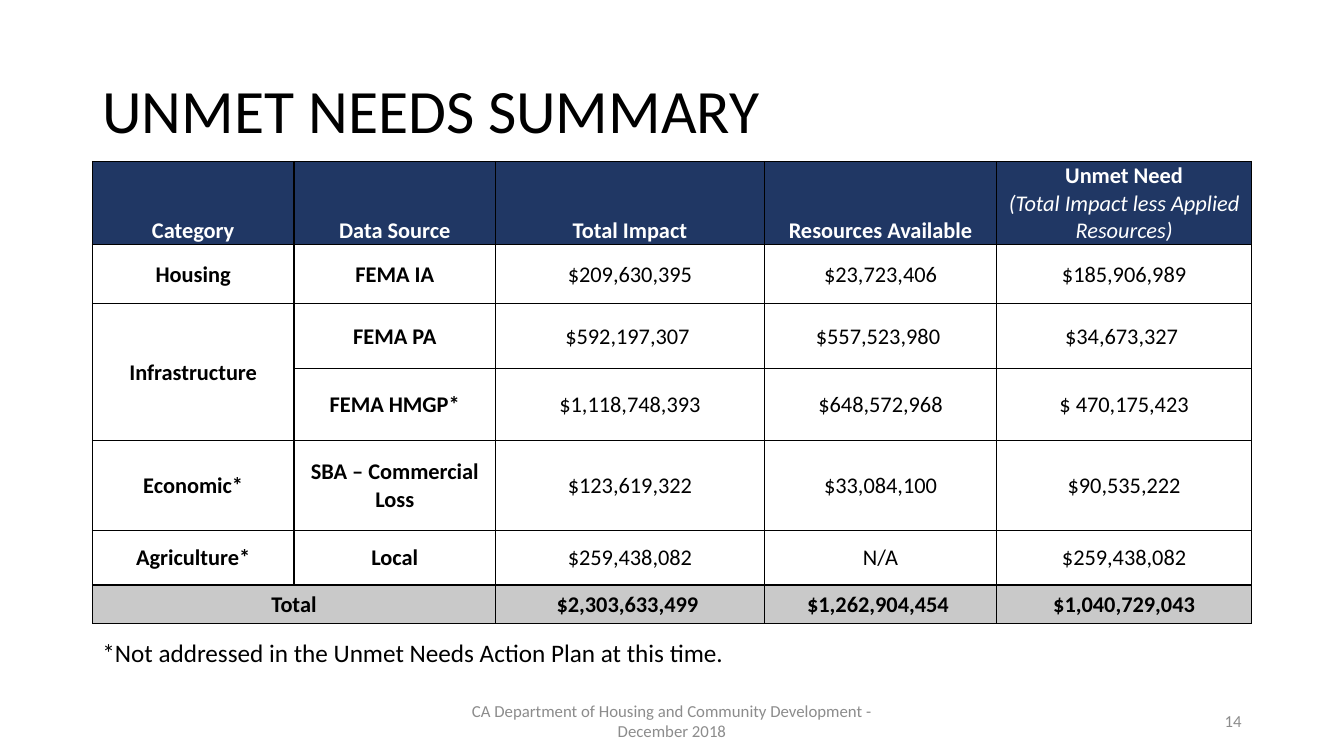
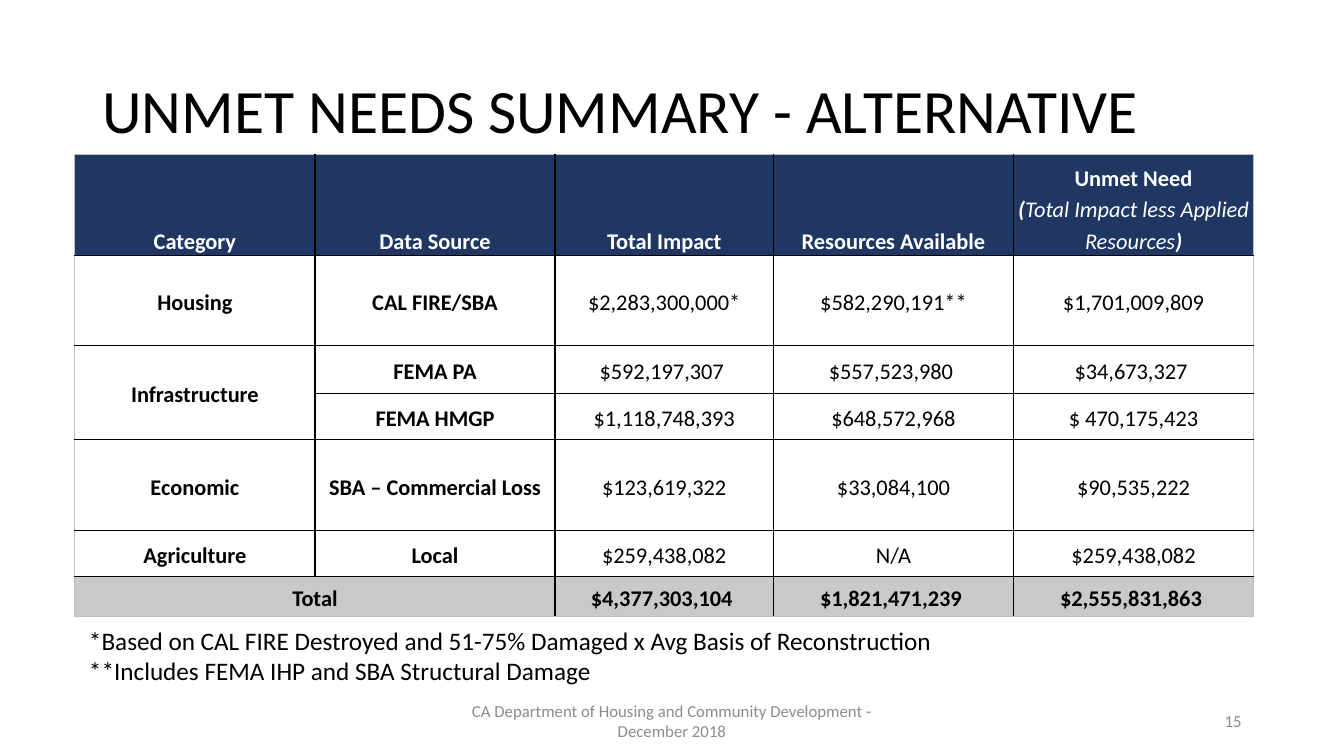
import pptx
import pptx.dml.color
import pptx.enum.text
import pptx.oxml
import pptx.oxml.ns
import pptx.util

Pt = pptx.util.Pt
ALIGN = pptx.enum.text.PP_ALIGN
ANCHOR = pptx.enum.text.MSO_ANCHOR

FONT = "Calibri"
BLACK, WHITE, NAVY, SILVER = "000000", "FFFFFF", "203764", "C9C9C9"
EDGE_GREY, FOOTER_GREY = "BFBFBF", "8C8C8C"
FOOTER = "CA Department of Housing and Community Development - December 2018"


def rgb(hex_colour):
    return pptx.dml.color.RGBColor.from_string(hex_colour)


def write(frame, paragraphs, size=16, colour=BLACK, align=ALIGN.LEFT,
          anchor=ANCHOR.TOP, spacing=None, bold=False):
    frame.word_wrap = True
    frame.vertical_anchor = anchor
    for index, pieces in enumerate(paragraphs):
        paragraph = frame.paragraphs[0] if index == 0 else frame.add_paragraph()
        paragraph.alignment = align
        if spacing:
            paragraph.line_spacing = spacing
        if isinstance(pieces, str):
            pieces = [(pieces, bold, False)]
        for words, is_bold, is_italic in pieces:
            run = paragraph.add_run()
            run.text = words
            run.font.name = FONT
            run.font.size = Pt(size)
            run.font.bold = is_bold
            run.font.italic = is_italic
            run.font.color.rgb = rgb(colour)


def add_text(slide, left, top, width, height, paragraphs, **style):
    box = slide.shapes.add_textbox(Pt(left), Pt(top), Pt(width), Pt(height))
    write(box.text_frame, paragraphs, **style)


def set_border(cell, side, colour):
    cell._tc.get_or_add_tcPr().append(pptx.oxml.parse_xml(
        f'<a:ln{side} {pptx.oxml.ns.nsdecls("a")} w="{Pt(1)}">'
        f'<a:solidFill><a:srgbClr val="{colour}"/></a:solidFill></a:ln{side}>'))


def format_cell(cell, content, row, column, last_row, last_column, edge, spacing):
    cell.margin_left = cell.margin_right = cell.margin_top = Pt(0.7)
    cell.margin_bottom = 0
    outer = {"L": column == 0, "R": column == last_column,
             "T": row == 0, "B": row == last_row}
    for side, is_outer in outer.items():
        set_border(cell, side, edge if is_outer else BLACK)
    header, total = row == 0, row == last_row
    if header or total:
        cell.fill.solid()
        cell.fill.fore_color.rgb = rgb(NAVY if header else SILVER)
    else:
        cell.fill.background()
    cell.vertical_anchor = ANCHOR.BOTTOM if header else ANCHOR.MIDDLE
    if content is not None:
        write(cell.text_frame, content if isinstance(content, list) else [content],
              colour=WHITE if header else BLACK, align=ALIGN.CENTER,
              anchor=cell.vertical_anchor, spacing=spacing,
              bold=header or total or column < 2)


def add_needs_table(slide, left, top, widths, heights, rows, edge=BLACK, spacing=None):
    table = slide.shapes.add_table(len(heights), len(widths), Pt(left), Pt(top),
                                   Pt(sum(widths)), Pt(sum(heights))).table
    table.first_row = table.horz_banding = False
    for column, width in zip(table.columns, widths):
        column.width = Pt(width)
    for row, height in zip(table.rows, heights):
        row.height = Pt(height)
    table.cell(2, 0).merge(table.cell(3, 0))
    last_row, last_column = len(heights) - 1, len(widths) - 1
    table.cell(last_row, 0).merge(table.cell(last_row, 1))
    for r, contents in enumerate(rows):
        for c, content in enumerate(contents):
            format_cell(table.cell(r, c), content, r, c, last_row, last_column,
                        edge, spacing)


def needs_rows(formula, housing, totals, mark=""):
    return [
        ["Category", "Data Source", "Total Impact", "Resources Available",
         ["Unmet Need", formula]],
        ["Housing", *housing],
        ["Infrastructure", "FEMA PA", "$592,197,307 ", "$557,523,980 ", "$34,673,327 "],
        [None, "FEMA HMGP" + mark, "$1,118,748,393", "$648,572,968", "$ 470,175,423"],
        ["Economic" + mark, "SBA – Commercial Loss", "$123,619,322", "$33,084,100",
         "$90,535,222"],
        ["Agriculture" + mark, "Local", "$259,438,082", "N/A", "$259,438,082"],
        ["Total", None, *totals],
    ]


def add_needs_slide(deck, title, number):
    slide = deck.slides.add_slide(deck.slide_layouts.get_by_name("Title Only"))
    heading = slide.shapes.title
    heading.left, heading.top = Pt(66), Pt(29)
    heading.width, heading.height = Pt(842), Pt(104)
    write(heading.text_frame, [title], size=44, anchor=ANCHOR.MIDDLE, spacing=0.9)
    footer_style = dict(size=12, colour=FOOTER_GREY, anchor=ANCHOR.MIDDLE)
    add_text(slide, 318, 500.5, 324, 28.8, [FOOTER], align=ALIGN.CENTER, **footer_style)
    add_text(slide, 678, 500.5, 216, 28.8, [str(number)], align=ALIGN.RIGHT,
             **footer_style)
    return slide


def main():
    deck = pptx.Presentation()
    deck.slide_width, deck.slide_height = Pt(960), Pt(540)

    summary = add_needs_slide(deck, "UNMET NEEDS SUMMARY", 14)
    add_needs_table(
        summary, 66, 115.4, [144, 144, 192, 166, 182],
        [59, 42.5, 46.5, 51, 64.5, 39, 27.5],
        needs_rows([("(Total Impact less Applied Resources)", False, True)],
                   ["FEMA IA", "$209,630,395", "$23,723,406", "$185,906,989"],
                   ["$2,303,633,499 ", "$1,262,904,454 ", "$1,040,729,043"], mark="*"))
    add_text(summary, 66, 451.5, 461, 29,
             ["*Not addressed in the Unmet Needs Action Plan at this time."], size=18)

    alternative = add_needs_slide(deck, "UNMET NEEDS SUMMARY - ALTERNATIVE", 15)
    add_needs_table(
        alternative, 53.5, 110.2, [171.5, 171.5, 156, 171.5, 171.5],
        [72, 64.5, 34.5, 32.5, 65.5, 32.5, 29],
        needs_rows([("(", True, True), ("Total Impact less Applied Resources", False, True),
                    (")", True, True)],
                   ["CAL FIRE/SBA", "$2,283,300,000*", "$582,290,191**", "$1,701,009,809"],
                   ["$4,377,303,104 ", "$1,821,471,239 ", "$2,555,831,863 "]),
        edge=EDGE_GREY, spacing=1.15)
    add_text(alternative, 56.5, 443, 626, 51,
             ["*Based on CAL FIRE Destroyed and 51-75% Damaged x Avg Basis of Reconstruction",
              "**Includes FEMA IHP and SBA Structural Damage"], size=18)

    deck.save("out.pptx")


if __name__ == "__main__":
    main()
